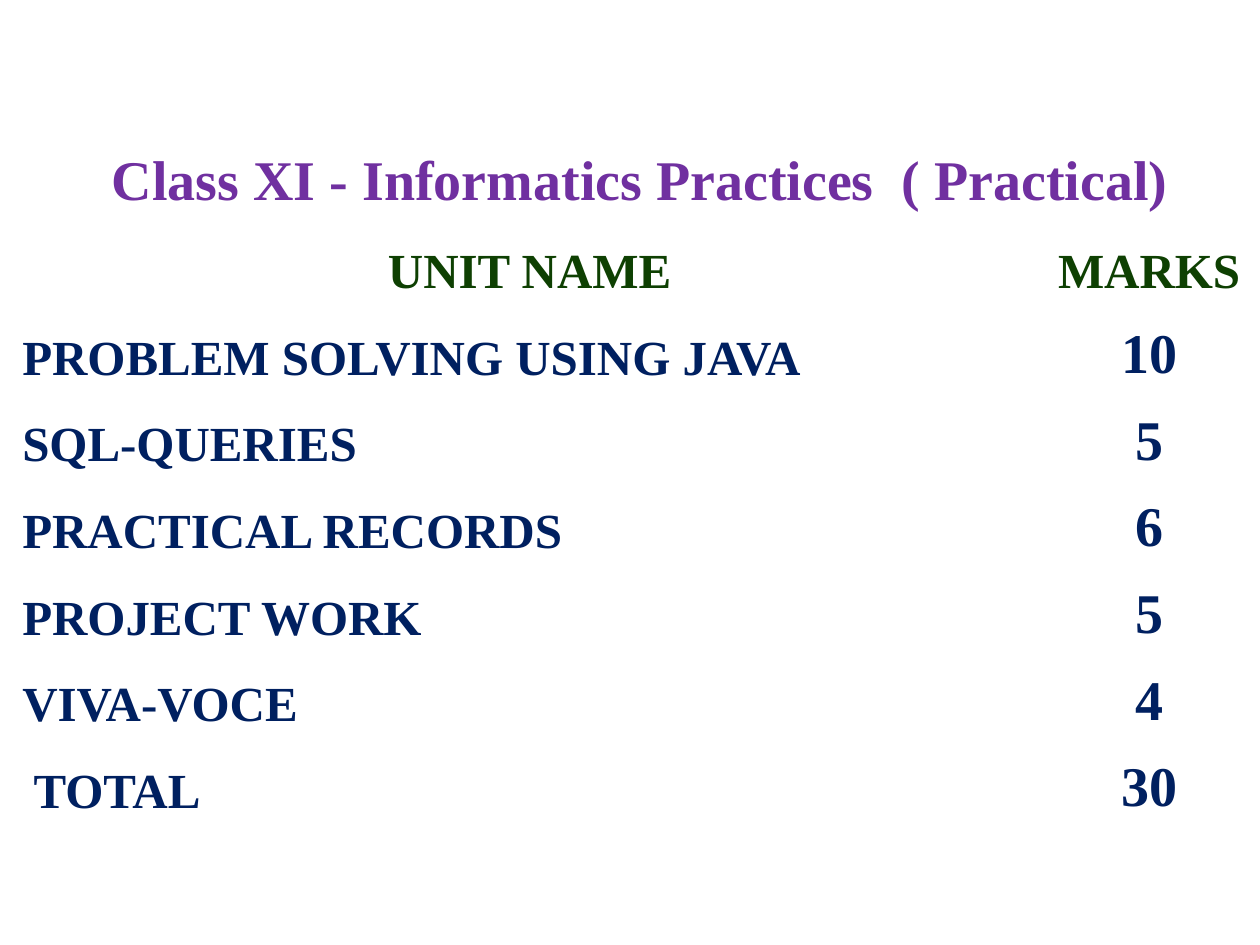
from lxml import etree
from pptx import Presentation
from pptx.dml.color import RGBColor
from pptx.enum import text
from pptx.oxml import ns
from pptx.util import Pt

PURPLE = RGBColor(0x70, 0x30, 0xA0)
GREEN = RGBColor(0x0E, 0x40, 0x02)
NAVY = RGBColor(0x00, 0x20, 0x60)
WHITE = RGBColor(0xFF, 0xFF, 0xFF)

HEADING = "Class XI - Informatics Practices  ( Practical)"
COLUMN_TITLES = ("UNIT NAME", "MARKS")
UNITS = [
    ("PROBLEM SOLVING USING JAVA", "10"),
    ("SQL-QUERIES", "5"),
    ("PRACTICAL RECORDS", "6"),
    ("PROJECT WORK", "5"),
    ("VIVA-VOCE", "4"),
    (" TOTAL", "30"),
]
CELL_FORMAT = {
    "margin_left": Pt(0.75),
    "margin_right": Pt(0.75),
    "margin_top": Pt(0.75),
    "margin_bottom": Pt(0),
    "vertical_anchor": text.MSO_ANCHOR.BOTTOM,
}
LEFT, CENTER = text.PP_ALIGN.LEFT, text.PP_ALIGN.CENTER


def apply_format(target, values):
    """Set each attribute of the target from a dict of format values."""
    for attribute, value in values.items():
        setattr(target, attribute, value)


def add_borders(cell):
    """Draw a thin white line on all four sides of a cell."""
    properties = cell._tc.get_or_add_tcPr()
    for side in ("lnL", "lnR", "lnT", "lnB"):
        line = etree.SubElement(properties, ns.qn(f"a:{side}"), w=str(Pt(1)))
        paint = etree.SubElement(line, ns.qn("a:solidFill"))
        etree.SubElement(paint, ns.qn("a:srgbClr"), val=str(WHITE))


def write_cell(cell, wording, size, color, alignment=CENTER):
    """Fill one cell with bold text on a clear ground."""
    apply_format(cell, CELL_FORMAT)
    cell.fill.background()
    cell.text = wording
    paragraph = cell.text_frame.paragraphs[0]
    paragraph.alignment = alignment
    font = paragraph.runs[0].font
    apply_format(font, {"name": "Times New Roman", "size": Pt(size), "bold": True})
    font.color.rgb = color


def add_marks_table(slide, left, top, width, height, marks_width):
    """Place the table of units and marks in the given box."""
    row_count = len(UNITS) + 2
    marks_table = slide.shapes.add_table(row_count, 2, left, top, width, height).table
    apply_format(marks_table, {"first_row": False, "horz_banding": False})
    marks_table.columns[0].width = width - marks_width
    marks_table.columns[1].width = marks_width
    for row in marks_table.rows:
        row.height = height // row_count
    for cell in marks_table.iter_cells():
        add_borders(cell)
        cell.fill.background()

    heading = marks_table.cell(0, 0)
    heading.merge(marks_table.cell(0, 1))
    write_cell(heading, HEADING, 32, PURPLE)
    for column, title in enumerate(COLUMN_TITLES):
        write_cell(marks_table.cell(1, column), title, 28, GREEN)
    for row, (unit, marks) in enumerate(UNITS, start=2):
        write_cell(marks_table.cell(row, 0), unit, 28, NAVY, LEFT)
        write_cell(marks_table.cell(row, 1), marks, 32, NAVY)


def main():
    """Build and save the slide."""
    deck = Presentation()
    apply_format(deck, {"slide_width": Pt(720), "slide_height": Pt(540)})
    slide = deck.slides.add_slide(deck.slide_layouts[6])
    add_marks_table(slide, Pt(12), Pt(72), Pt(708), Pt(396), Pt(126.75))
    deck.save("out.pptx")


if __name__ == "__main__":
    main()
